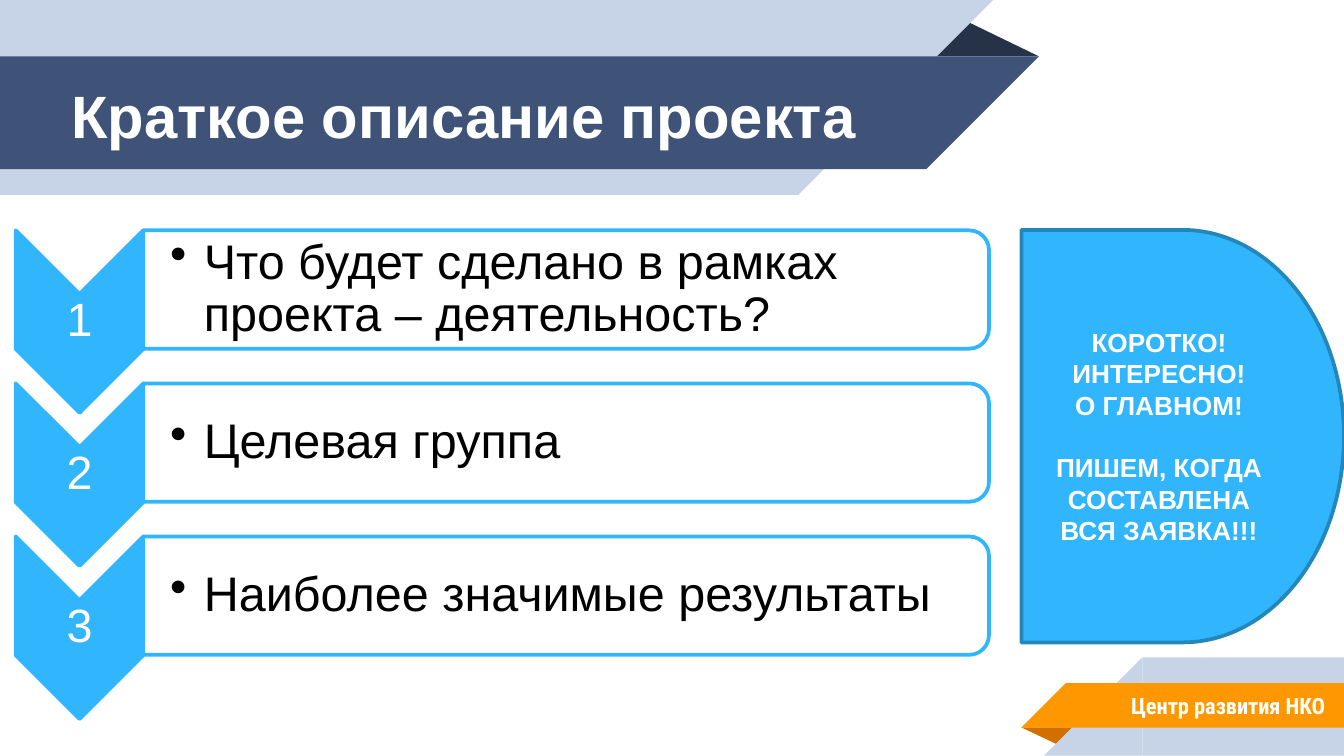
from lxml.etree import SubElement
from pptx import Presentation
from pptx.dml.color import RGBColor
from pptx.enum.shapes import MSO_SHAPE
from pptx.enum.text import MSO_ANCHOR, PP_ALIGN
from pptx.oxml.ns import qn
from pptx.util import Pt

COLORS = {
    "white": "FFFFFF",
    "black": "000000",
    "pale": "C7D3E6",
    "navy": "3F5378",
    "navy_fold": "263248",
    "orange": "FF9800",
    "orange_fold": "D26F00",
    "sky": "31B6FD",
    "sky_edge": "2487BB",
}
TITLE = {"size": Pt(32), "name": "Arial", "bold": True}
FOOTER = {"size": Pt(12), "name": "Roboto Condensed", "bold": True}
NUMBER = {"size": Pt(25), "name": "Arial"}
POINT = {"size": Pt(26), "name": "Arial"}
ADVICE = {"size": Pt(14), "name": "Arial", "bold": True}

STEPS = [
    "Что будет сделано в рамках проекта – деятельность?",
    "Целевая группа",
    "Наиболее значимые результаты",
]
ADVICE_LINES = [
    ("КОРОТКО! ИНТЕРЕСНО!", 0),
    ("О ГЛАВНОМ!", 0),
    ("ПИШЕМ, КОГДА СОСТАВЛЕНА", 16.8),
    ("ВСЯ ЗАЯВКА!!!", 0),
]


def set_values(target, values):
    for name, value in values.items():
        setattr(target, name, value)


def color(name):
    return RGBColor.from_string(COLORS[name])


def add_block(page, kind, box, fill, line=None, rotation=0):
    left, top, width, height = box
    if rotation in (90, 270):
        left += (width - height) / 2
        top += (height - width) / 2
        width, height = height, width
    block = page.shapes.add_shape(kind, Pt(left), Pt(top), Pt(width), Pt(height))
    block.shadow.inherit = False
    block.rotation = rotation
    block.fill.solid()
    block.fill.fore_color.rgb = color(fill)
    if line:
        block.line.color.rgb = color(line)
        block.line.width = Pt(2)
    else:
        block.line.fill.background()
    return block


def write(para, text, font, ink):
    span = para.add_run()
    span.text = text
    set_values(span.font, font)
    span.font.color.rgb = color(ink)


def add_text(page, box, text, font, ink, align=PP_ALIGN.LEFT, insets=(7.2, 7.2)):
    label = page.shapes.add_textbox(*map(Pt, box))
    first, rest = map(Pt, insets)
    set_values(label.text_frame, {
        "word_wrap": True,
        "vertical_anchor": MSO_ANCHOR.MIDDLE,
        "margin_left": first,
        "margin_top": rest,
        "margin_right": rest,
        "margin_bottom": rest,
    })
    para = label.text_frame.paragraphs[0]
    para.alignment = align
    write(para, text, font, ink)
    return para


def add_bullet(para, indent):
    properties = para._p.get_or_add_pPr()
    properties.set("marL", str(Pt(indent)))
    properties.set("indent", str(-Pt(indent)))
    SubElement(properties, qn("a:buChar")).set("char", "•")


def add_ribbon(page, box, fill, slant_left=False):
    left, top, width, height = box
    straight = width - height
    start, tip, turn = (left + height, left, 270) if slant_left else (left, left + straight, 90)
    add_block(page, MSO_SHAPE.RECTANGLE, (start, top, straight, height), fill)
    add_block(page, MSO_SHAPE.RIGHT_TRIANGLE, (tip, top, height, height), fill, rotation=turn)


def add_fold(page, box, fill, rotation=0):
    fold = add_block(page, MSO_SHAPE.ISOSCELES_TRIANGLE, box, fill, rotation=rotation)
    fold.adjustments[0] = 0.32


def add_header(page, box):
    left, top, width, height = box
    add_fold(page, (left + width - 61.2, top + 10, 61.2, 20.2), "navy_fold")
    add_ribbon(page, (left, top, 532, height), "pale")
    add_ribbon(page, (left, top + 30.2, width, 60.5), "navy")
    add_text(page, (left + 31, top + 31, 465, 60.5), "Краткое описание проекта", TITLE, "white")


def add_footer(page, box):
    left, top, width, height = box
    add_fold(page, (left, top + 37.5, 31, 10), "orange_fold", 180)
    add_ribbon(page, (left + 12.2, top, width - 12.2, height), "pale", True)
    add_ribbon(page, (left, top + 13.8, width, 23.8), "orange", True)
    add_text(page, (left + 31, top + 13.2, 139, 25), "Центр развития НКО", FOOTER, "white",
             PP_ALIGN.RIGHT)


def add_step(page, box, number, text):
    left, top, width, height = box
    arrow = 68.4
    card = width - arrow
    add_block(page, MSO_SHAPE.CHEVRON, (left, top, arrow, 97.8), "sky", "sky", 90)
    para = add_text(page, (left, top + 34.2, arrow, 29.4), str(number), NUMBER, "white",
                    PP_ALIGN.CENTER, (1.4, 1.4))
    para.line_spacing = 0.9
    add_block(page, MSO_SHAPE.ROUND_2_SAME_RECTANGLE, (left + arrow, top, card, height),
              "white", "sky", 90)
    para = add_text(page, (left + arrow, top + 3, card - 3, height - 6), text, POINT, "black",
                    insets=(14.4, 1.4))
    para.line_spacing = 0.9
    add_bullet(para, 18)


def add_steps(page, box):
    left, top, width, height = box
    pitch = 82
    for index, text in enumerate(STEPS):
        add_step(page, (left, top + index * pitch, width, height - pitch * (len(STEPS) - 1)),
                 index + 1, text)


def add_advice(page, box):
    panel = add_block(page, MSO_SHAPE.FLOWCHART_DELAY, box, "sky", "sky_edge")
    frame = panel.text_frame
    set_values(frame, {"word_wrap": True, "vertical_anchor": MSO_ANCHOR.MIDDLE})
    for index, (text, gap) in enumerate(ADVICE_LINES):
        para = frame.add_paragraph() if index else frame.paragraphs[0]
        set_values(para, {"alignment": PP_ALIGN.CENTER, "space_before": Pt(gap)})
        write(para, text, ADVICE, "white")


def main():
    deck = Presentation()
    set_values(deck, {"slide_width": Pt(720), "slide_height": Pt(405)})
    page = deck.slides.add_slide(deck.slide_layouts[6])
    add_header(page, (0, 0, 556.6, 104.4))
    add_footer(page, (547.2, 352.2, 172.8, 52.6))
    add_steps(page, (8.4, 123.4, 521.4, 227.4))
    add_advice(page, (547.2, 123.2, 172.8, 221))
    deck.save("out.pptx")


if __name__ == "__main__":
    main()
